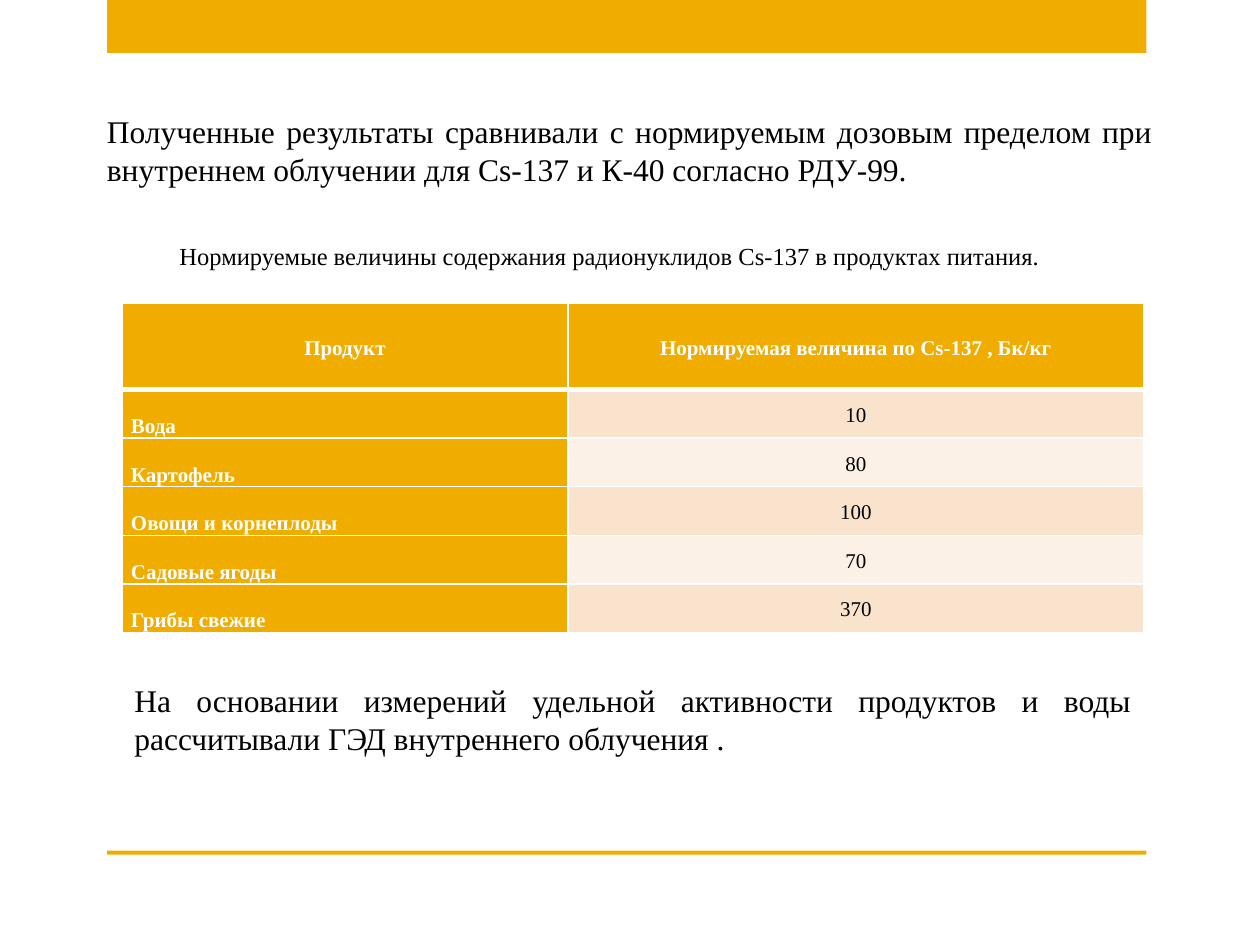
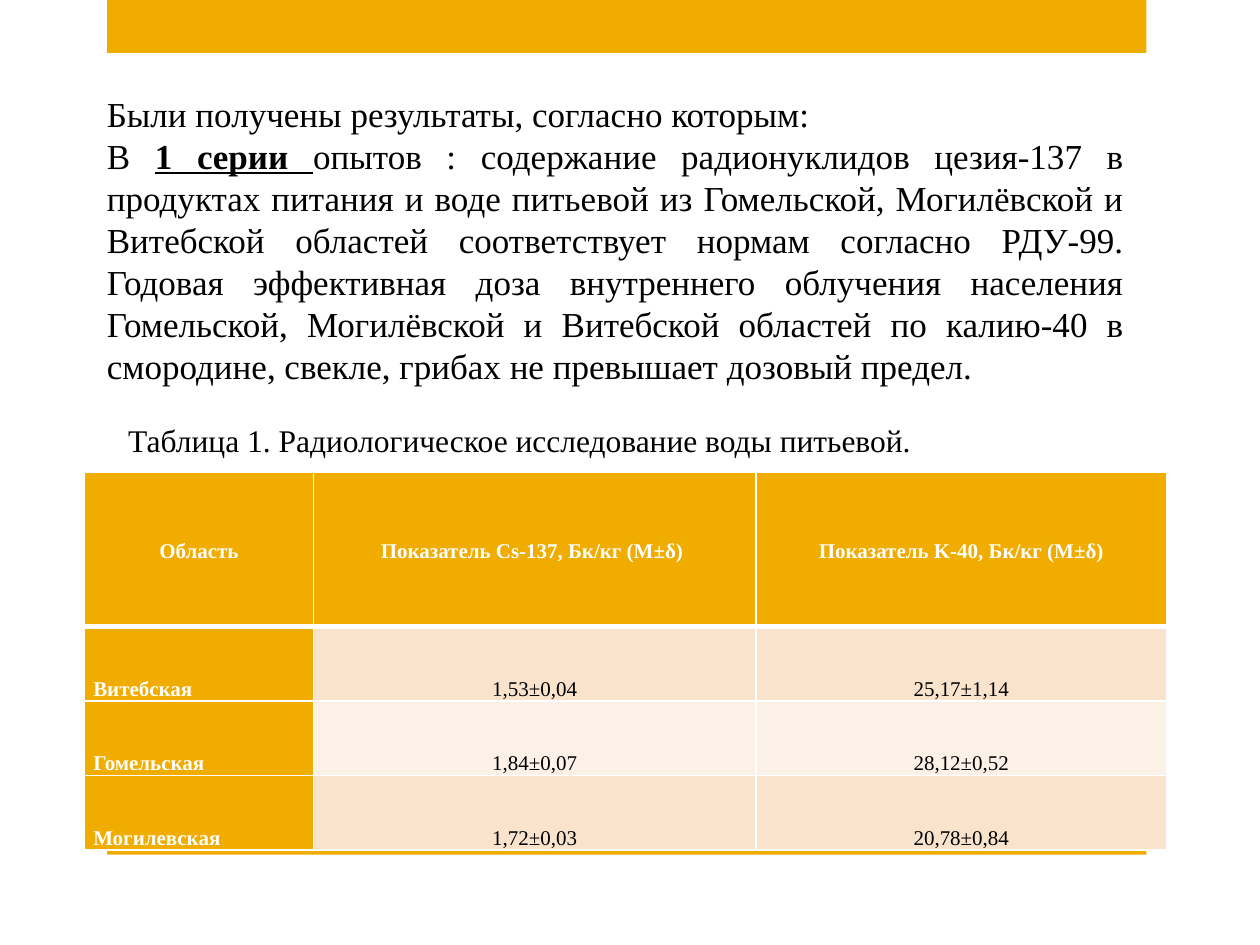
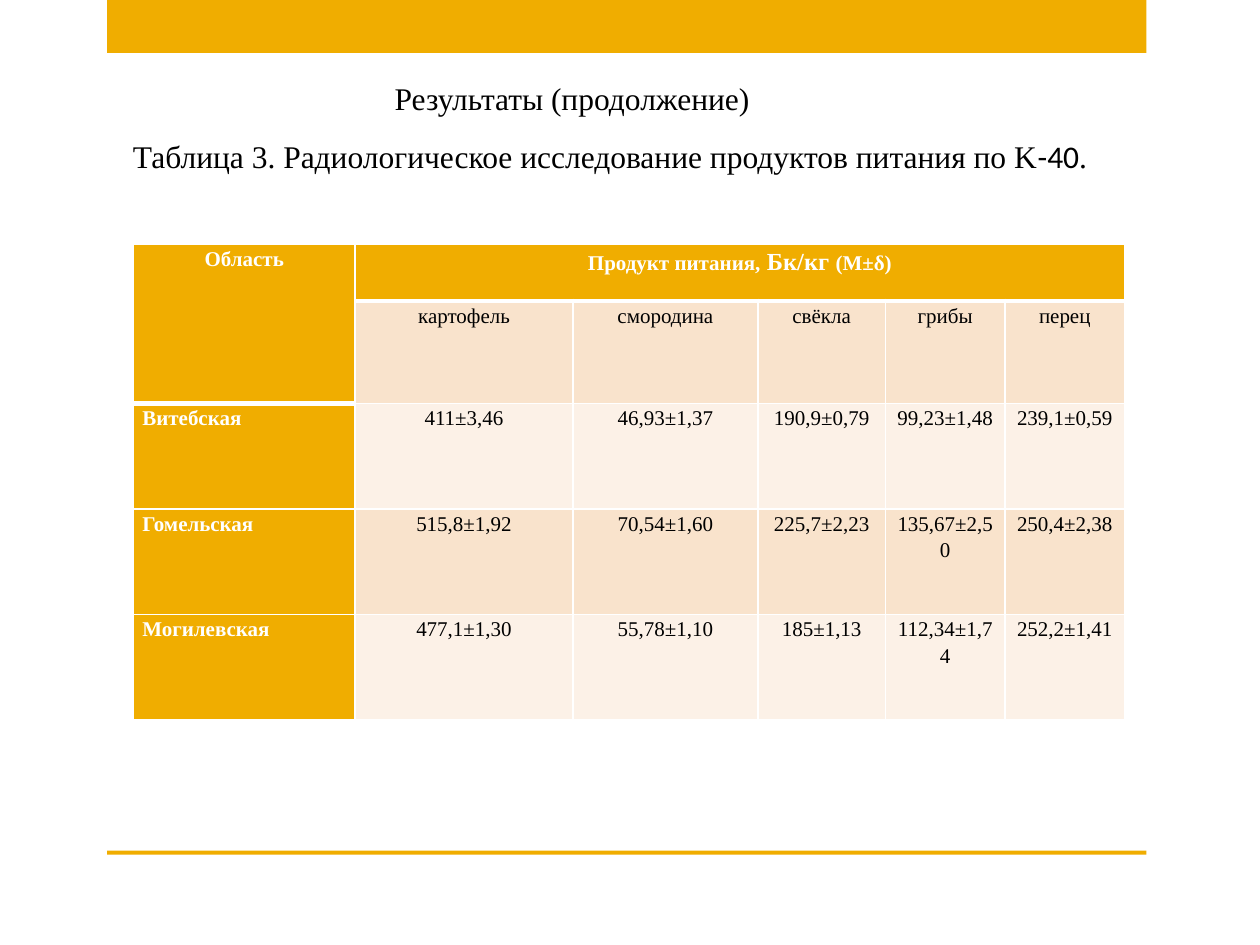
import pptx
import pptx.dml.color
import pptx.enum.shapes
import pptx.enum.text
import pptx.oxml.ns
import pptx.util
from lxml import etree

Cm = pptx.util.Cm
Pt = pptx.util.Pt
ALIGN = pptx.enum.text.PP_ALIGN
ANCHOR = pptx.enum.text.MSO_ANCHOR
GOLD, PEACH, CREAM, WHITE, BLACK = "F0AD00", "F9E3CC", "FCF1E7", "FFFFFF", "000000"
BASE_FONT = {"name": "Times New Roman", "size": 18, "bold": False, "color": BLACK}
FIRST_LINE = 1.24


def color(hex_text):
    return pptx.dml.color.RGBColor.from_string(hex_text)


def add_xml(parent, tag, **attributes):
    return etree.SubElement(parent, pptx.oxml.ns.qn(tag), attributes)


def set_values(target, values):
    for name, value in values.items():
        setattr(target, name, value)


# Text: a paragraph is a string or a list of (text, font changes)
def write_paragraph(para, content, font, layout):
    set_values(para, layout)
    pieces = [(content, {})] if isinstance(content, str) else content
    for text, changes in pieces:
        span = para.add_run()
        span.text = text
        values = BASE_FONT | font | changes
        span.font.color.rgb = color(values.pop("color"))
        set_values(span.font, values | {"size": Pt(values["size"])})


def write_box(shape, box, paragraphs, align=ALIGN.JUSTIFY, anchor=ANCHOR.TOP,
              first_line=0, **font):
    set_values(shape, dict(zip(("left", "top", "width", "height"), map(Cm, box))))
    frame = shape.text_frame
    set_values(frame, {"word_wrap": True, "vertical_anchor": anchor,
                       "auto_size": pptx.enum.text.MSO_AUTO_SIZE.NONE})
    layout = {"alignment": align, "space_before": Pt(0)}
    for index, content in enumerate(paragraphs):
        para = frame.add_paragraph() if index else frame.paragraphs[0]
        write_paragraph(para, content, font, layout)
        properties = para._p.get_or_add_pPr()
        properties.set("marL", "0")
        properties.set("indent", str(Cm(first_line)))
        add_xml(properties, "a:buNone")


def add_text(page, box, paragraphs, **options):
    write_box(page.shapes.add_textbox(0, 0, 0, 0), box, paragraphs, **options)


# Tables
def set_borders(cell, top, bottom):
    properties = cell._tc.get_or_add_tcPr()
    for side, width in (("L", 1), ("R", 1), ("T", top), ("B", bottom)):
        line = add_xml(properties, f"a:ln{side}", w=str(Pt(width)))
        add_xml(add_xml(line, "a:solidFill"), "a:srgbClr", val=WHITE)


def add_data_table(page, corner, widths, heights, rows, anchors, corner_rows=1):
    """anchors holds the anchor of header, label and value cells."""
    table = page.shapes.add_table(len(heights), len(widths), *map(Cm, corner),
                                  Cm(sum(widths)), Cm(sum(heights))).table
    for column, width in zip(table.columns, widths):
        column.width = Cm(width)
    for row, height in zip(table.rows, heights):
        row.height = Cm(height)

    for row_index, row in enumerate(rows):
        for column_index, content in enumerate(row):
            cell = table.cell(row_index, column_index)
            header_rows = corner_rows if column_index == 0 else 1
            is_header = row_index < header_rows
            is_label = column_index == 0 and not is_header
            is_value = not (is_header or is_label)
            set_borders(cell, top=3 if row_index == header_rows else 1,
                        bottom=3 if is_header else 1)
            cell.fill.solid()
            band = PEACH if row_index % 2 else CREAM
            cell.fill.fore_color.rgb = color(band if is_value else GOLD)
            set_values(cell, {
                "margin_left": Cm(0.18), "margin_right": Cm(0.18),
                "margin_top": 0, "margin_bottom": 0,
                "vertical_anchor": anchors[0 if is_header else 1 if is_label else 2]})
            if content:
                write_paragraph(
                    cell.text_frame.paragraphs[0], content,
                    {"size": 12, "bold": not is_value,
                     "color": BLACK if is_value else WHITE},
                    {"alignment": ALIGN.JUSTIFY if is_label else ALIGN.CENTER,
                     "line_spacing": 1.15})
    return table


# Bands shared by all slides, kept on the master
def add_master_bands(deck, page):
    tree = deck.slide_master.shapes.element
    for index, (top, height) in enumerate(((0, 1.07), (17.15, 0.08))):
        band = page.shapes.add_shape(pptx.enum.shapes.MSO_SHAPE.RECTANGLE,
                                     Cm(2.16), Cm(top), Cm(20.95), Cm(height))
        band.shadow.inherit = False
        band.fill.solid()
        band.fill.fore_color.rgb = color(GOLD)
        band.line.fill.background()
        tree.insert(2 + index, band.element)


def build_norms(page):
    write_box(page.shapes.title, (1.9, 2.13, 21.59, 1.8), [
        "Полученные результаты сравнивали с нормируемым дозовым пределом при "
        "внутреннем облучении для Cs-137 и К-40 согласно РДУ-99."])
    add_data_table(
        page, (2.46, 6.12), (8.99, 11.61), [1.73] + [0.98] * 5,
        [("Продукт", "Нормируемая величина по Cs-137 , Бк/кг"),
         ("Вода", "10"),
         ("Картофель", "80"),
         ("Овощи и корнеплоды", "100"),
         ("Садовые ягоды", "70"),
         ("Грибы свежие", "370")],
        (ANCHOR.MIDDLE, ANCHOR.BOTTOM, ANCHOR.MIDDLE))
    add_text(page, (2.69, 4.72, 19.2, 0.86), [
        "Нормируемые величины содержания радионуклидов Cs-137 в продуктах питания."],
        align=ALIGN.CENTER, anchor=ANCHOR.MIDDLE, size=14)
    add_text(page, (2.46, 13.61, 20.6, 1.8), [
        "На основании измерений удельной активности продуктов и воды "
        "рассчитывали ГЭД внутреннего облучения ."])


def build_water(page):
    write_box(page.placeholders[1], (1.9, 1.73, 21.01, 6.25), [
        "Были получены результаты, согласно которым:",
        [("В ", {}),
         ("1 серии ", {"bold": True, "underline": True}),
         ("опытов : содержание радионуклидов цезия-137 в продуктах питания и воде "
          "питьевой из Гомельской, Могилёвской и Витебской областей соответствует "
          "нормам согласно РДУ-99. Годовая эффективная доза внутреннего облучения "
          "населения Гомельской, Могилёвской и Витебской областей по калию-40 в "
          "смородине, свекле, грибах не превышает дозовый предел.", {})]], size=20)
    add_data_table(
        page, (1.7, 9.53), (4.62, 8.92, 8.28), [3.1] + [1.5] * 3,
        [("Область", "Показатель Cs-137, Бк/кг (М±δ) ", "Показатель K-40, Бк/кг (М±δ)"),
         ("Витебская", "1,53±0,04", "25,17±1,14"),
         ("Гомельская", "1,84±0,07", "28,12±0,52"),
         ("Могилевская", "1,72±0,03", "20,78±0,84")],
        (ANCHOR.MIDDLE, ANCHOR.BOTTOM, ANCHOR.BOTTOM))
    write_box(page.shapes.title, (1.09, 8.36, 23, 1.02),
              ["Таблица 1. Радиологическое исследование воды питьевой."],
              align=ALIGN.LEFT, anchor=ANCHOR.MIDDLE, first_line=FIRST_LINE)


def build_food(page):
    table = add_data_table(
        page, (2.69, 4.93), (4.47, 4.39, 3.73, 2.57, 2.41, 2.41),
        [1.14, 2.06] + [2.13] * 3,
        [("Область", [("Продукт питания,", {}), (" Бк/кг ", {"size": 14}), ("(М±δ)", {})],
          "", "", "", ""),
         ("", "картофель", "смородина", "свёкла", "грибы", "перец"),
         ("Витебская", "411±3,46", "46,93±1,37", "190,9±0,79", "99,23±1,48", "239,1±0,59"),
         ("Гомельская", "515,8±1,92", "70,54±1,60", "225,7±2,23", "135,67±2,50", "250,4±2,38"),
         ("Могилевская", "477,1±1,30", "55,78±1,10", "185±1,13", "112,34±1,74", "252,2±1,41")],
        [ANCHOR.TOP] * 3, corner_rows=2)
    table.cell(0, 0).merge(table.cell(1, 0))
    table.cell(0, 1).merge(table.cell(0, 5))
    add_text(page, (1.19, 2.64, 21.95, 1.02), [
        [("Таблица 3. Радиологическое исследование продуктов питания по K", {}),
         ("-40", {"name": "Calibri"}),
         (".", {})]], anchor=ANCHOR.MIDDLE, first_line=FIRST_LINE)
    write_box(page.shapes.title, (7.7, 1.47, 9.55, 1.02),
              ["Результаты (продолжение)"], align=ALIGN.LEFT)


def main():
    deck = pptx.Presentation()
    deck.slide_width, deck.slide_height = Cm(25.4), Cm(19.05)
    title_and_body, title_only = deck.slide_layouts[1], deck.slide_layouts[5]
    for layout, build in ((title_only, build_norms), (title_and_body, build_water),
                          (title_only, build_food)):
        build(deck.slides.add_slide(layout))
    add_master_bands(deck, deck.slides[0])
    deck.save("out.pptx")


if __name__ == "__main__":
    main()
